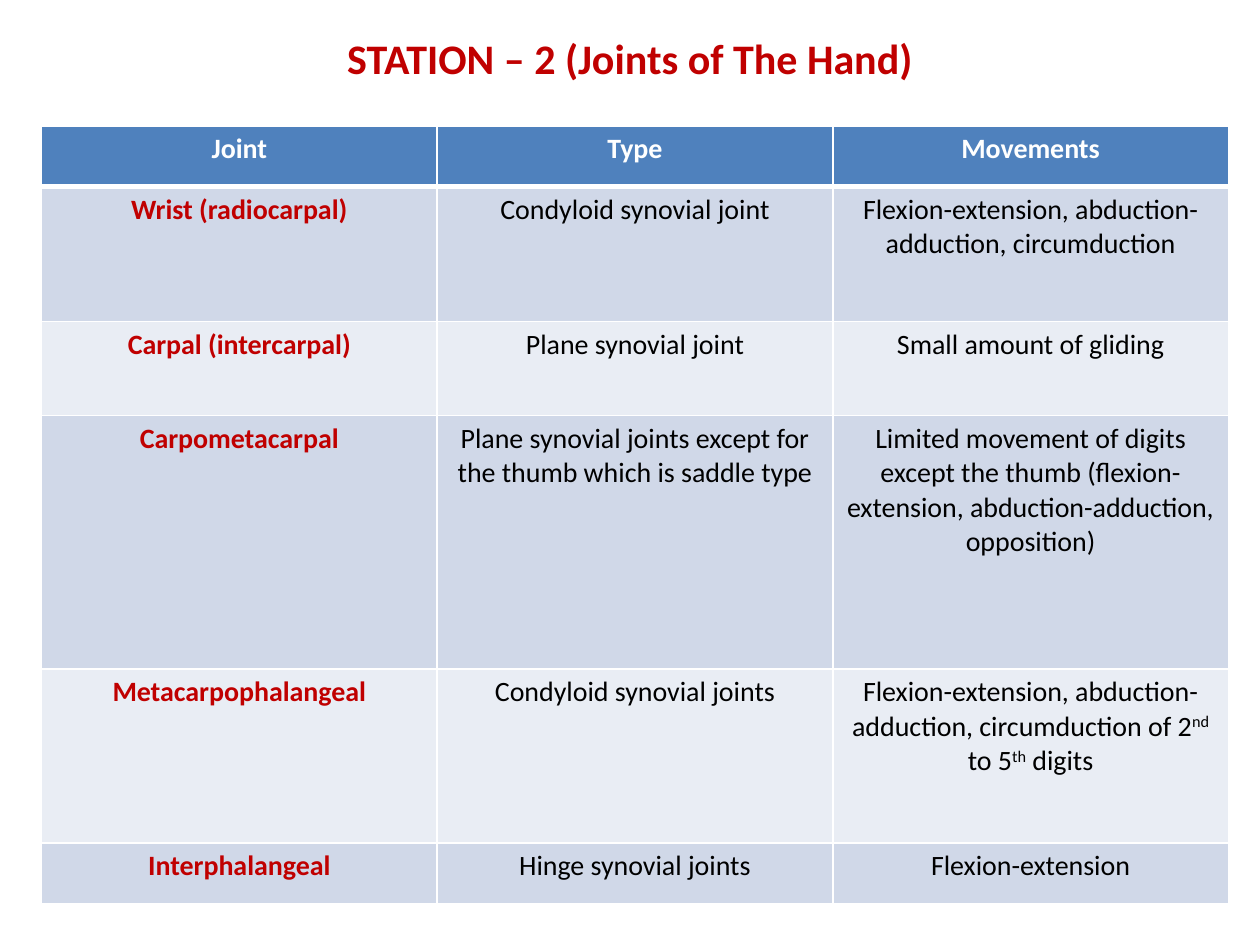
from lxml.etree import SubElement as Sub
from pptx import Presentation
from pptx.dml.color import RGBColor as Rgb
from pptx.enum.text import MSO_ANCHOR as Anchor, PP_ALIGN as Align
from pptx.oxml.ns import qn
from pptx.util import Inches, Pt

WIDE, HIGH = 10, 7.5
RED, BLACK, WHITE = "C00000", "000000", "FFFFFF"
BLUE, BANDS = "4F81BD", ("D0D8E8", "E9EDF4")
COLS, ROWS = [3.14] * 3, [0.48, 1.07, 0.75, 2.01, 1.38, 0.48]
JOINTS = [
    ("Joint", "Type", "Movements"),
    ("Wrist (radiocarpal)", "Condyloid synovial joint",
     "Flexion-extension, abduction-adduction, circumduction"),
    ("Carpal (intercarpal)", "Plane synovial joint", "Small amount of gliding"),
    ("Carpometacarpal",
     "Plane synovial joints except for the thumb which is saddle type",
     "Limited movement of digits except the thumb "
     "(flexion-extension, abduction-adduction, opposition)"),
    ("Metacarpophalangeal", "Condyloid synovial joints",
     "Flexion-extension, abduction-adduction, circumduction of 2^nd^ to 5^th^ digits"),
    ("Interphalangeal", "Hinge synovial joints", "Flexion-extension"),
]


def paint(fmt, tone):
    """Give a font or fill format a solid hex colour."""
    if hasattr(fmt, "solid"):
        fmt.solid()
        fmt.fore_color.rgb = Rgb.from_string(tone)
    else:
        fmt.color.rgb = Rgb.from_string(tone)


def write(frame, text, size, tone, bold):
    """Write one centred paragraph, raising the parts held between carets."""
    para = frame.paragraphs[0]
    para.alignment = Align.CENTER
    look = {"name": "Calibri", "size": Pt(size), "bold": bold}
    for i, part in enumerate(text.split("^")):
        run = para.add_run()
        run.text = part
        for key, value in look.items():
            setattr(run.font, key, value)
        paint(run.font, tone)
        if i % 2:
            run._r.get_or_add_rPr().set("baseline", "30000")


def edge(cell, widths):
    """Draw white cell borders from a dict of side to width in points."""
    props = cell._tc.get_or_add_tcPr()
    for side, width in widths.items():
        line = Sub(props, qn(f"a:ln{side}"), w=str(Pt(width)))
        Sub(Sub(line, qn("a:solidFill")), qn("a:srgbClr"), val=WHITE)


def title(slide, text):
    """Add the heading across the full slide width."""
    box = slide.shapes.add_textbox(0, Inches(0.01), Inches(WIDE), Inches(HIGH * 0.12))
    frame = box.text_frame
    frame.word_wrap = True
    frame.vertical_anchor = Anchor.MIDDLE
    write(frame, text, 24, RED, True)


def grid(slide, data):
    """Add the table with a blue head, banded rows and red joint names."""
    area = [Inches(n) for n in (0.33, 1, sum(COLS), sum(ROWS))]
    table = slide.shapes.add_table(len(ROWS), len(COLS), *area).table
    for col, width in zip(table.columns, COLS):
        col.width = Inches(width)
    for r, (row, high) in enumerate(zip(table.rows, ROWS)):
        row.height = Inches(high)
        for c, cell in enumerate(row.cells):
            head = r == 0
            tone = WHITE if head else BLACK if c else RED
            edge(cell, {"L": 1, "R": 1, "T": 3 if r == 1 else 1, "B": 3 if head else 1})
            paint(cell.fill, BLUE if head else BANDS[(r - 1) % 2])
            write(cell.text_frame, data[r][c], 16, tone, head or c == 0)


def main():
    """Build and save the slide."""
    deck = Presentation()
    deck.slide_width, deck.slide_height = Inches(WIDE), Inches(HIGH)
    slide = deck.slides.add_slide(deck.slide_layouts[6])
    title(slide, "STATION – 2 (Joints of The Hand)")
    grid(slide, JOINTS)
    deck.save("out.pptx")


if __name__ == "__main__":
    main()
